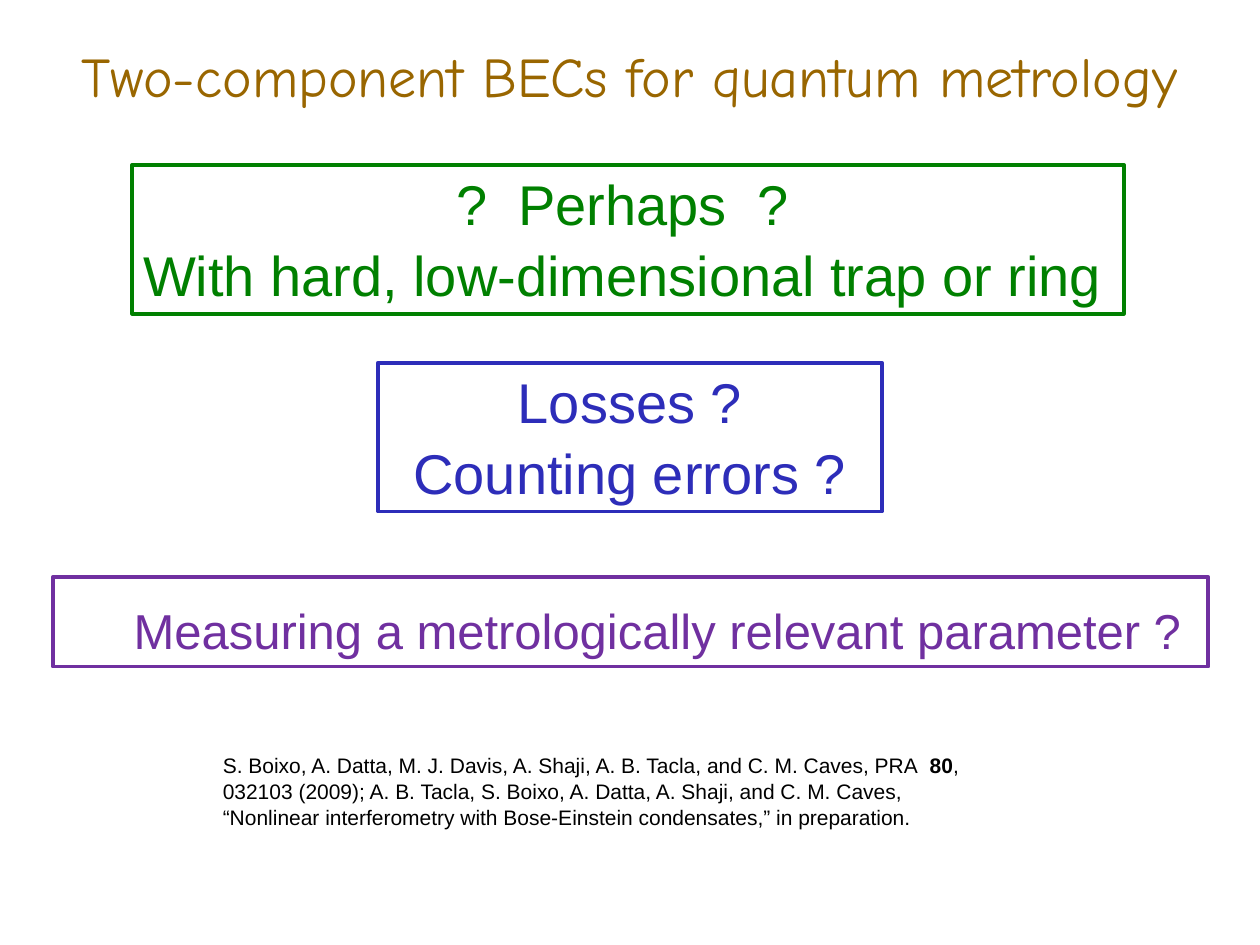
"""Build the slide on two-component BECs for quantum metrology."""
import pptx
import pptx.dml.color
import pptx.enum.shapes
import pptx.enum.text
import pptx.util
from dataclasses import dataclass

Inches = pptx.util.Inches
Pt = pptx.util.Pt
ANCHOR = pptx.enum.text.MSO_ANCHOR
ALIGN = pptx.enum.text.PP_ALIGN


@dataclass(frozen=True)
class Theme:
    title: str = "996600"
    hope: str = "008000"
    doubt: str = "2D2DB9"
    question: str = "7030A0"
    text: str = "000000"
    title_font: str = "Comic Neue"
    body_font: str = "Arial"
    large: int = 32
    medium: int = 28
    small: int = 12
    border: float = 2.25
    spacing: float = 1.05


theme = Theme()


def set_frame(tf, **values):
    base = {"word_wrap": True, "auto_size": pptx.enum.text.MSO_AUTO_SIZE.NONE}
    for name, value in {**base, **values}.items():
        setattr(tf, name, value)


def add_run(p, text, color, size, font=theme.body_font, bold=False):
    r = p.add_run()
    r.text = text
    for name, value in {"name": font, "size": Pt(size), "bold": bold}.items():
        setattr(r.font, name, value)
    r.font.color.rgb = pptx.dml.color.RGBColor.from_string(color)


prs = pptx.Presentation()
prs.slide_width, prs.slide_height = Inches(10), Inches(7.5)
s = prs.slides.add_slide(prs.slide_layouts[5])

sp = s.shapes.title
sp.left, sp.top, sp.width, sp.height = map(Inches, (0, 0.28, 10, 0.64))
set_frame(sp.text_frame, vertical_anchor=ANCHOR.MIDDLE)
p = sp.text_frame.paragraphs[0]
p.alignment = ALIGN.CENTER
add_run(p, "Two-component BECs for quantum metrology", theme.title, theme.large, theme.title_font)

boxes = [
    ((1.05, 1.31, 7.87, 1.18), theme.hope, theme.large,
     ["?  Perhaps  ?", "With hard, low-dimensional trap or ring"],
     {"word_wrap": False, "margin_right": Inches(0.18)}),
    ((3, 2.88, 4, 1.18), theme.doubt, theme.large,
     ["Losses ?", "Counting errors ?"], {}),
    ((0.42, 4.58, 9.17, 0.71), theme.question, theme.medium,
     ["Measuring a metrologically relevant parameter ?"],
     {"margin_left": Inches(0.52), "margin_bottom": Inches(0.06)}),
]
for place, color, size, lines, frame in boxes:
    sp = s.shapes.add_shape(pptx.enum.shapes.MSO_SHAPE.RECTANGLE, *map(Inches, place))
    sp.shadow.inherit = False
    sp.fill.background()
    sp.line.color.rgb = pptx.dml.color.RGBColor.from_string(color)
    sp.line.width = Pt(theme.border)
    tf = sp.text_frame
    set_frame(tf, vertical_anchor=ANCHOR.BOTTOM, **frame)
    for i, line in enumerate(lines):
        p = tf.add_paragraph() if i else tf.paragraphs[0]
        p.alignment = ALIGN.CENTER
        p.line_spacing = theme.spacing
        add_run(p, line, color, size)

sp = s.shapes.add_textbox(*map(Inches, (1.67, 5.91, 6.33, 0.71)))
set_frame(sp.text_frame, vertical_anchor=ANCHOR.TOP)
p = sp.text_frame.paragraphs[0]
p.line_spacing = theme.spacing
citation = [
    ("S. Boixo, A. Datta, M. J. Davis, A. Shaji, A. B. Tacla, and C. M. Caves, PRA  ", False),
    ("80", True),
    (", 032103 (2009); A. B. Tacla, S. Boixo, A. Datta, A. Shaji, and C. M. Caves, "
     "“Nonlinear interferometry with Bose-Einstein condensates,” in preparation.", False),
]
for text, bold in citation:
    add_run(p, text, theme.text, theme.small, bold=bold)

prs.save("out.pptx")
